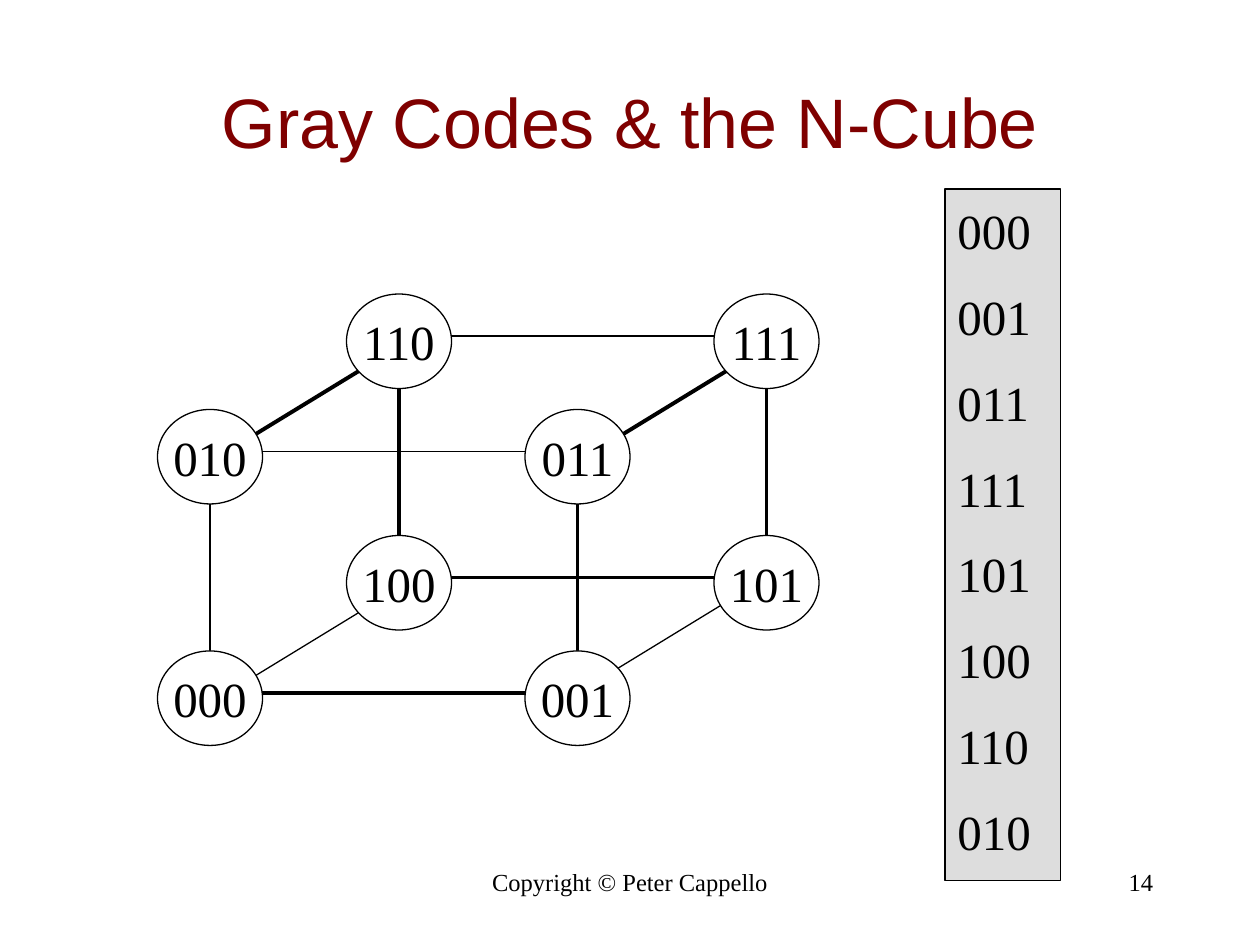
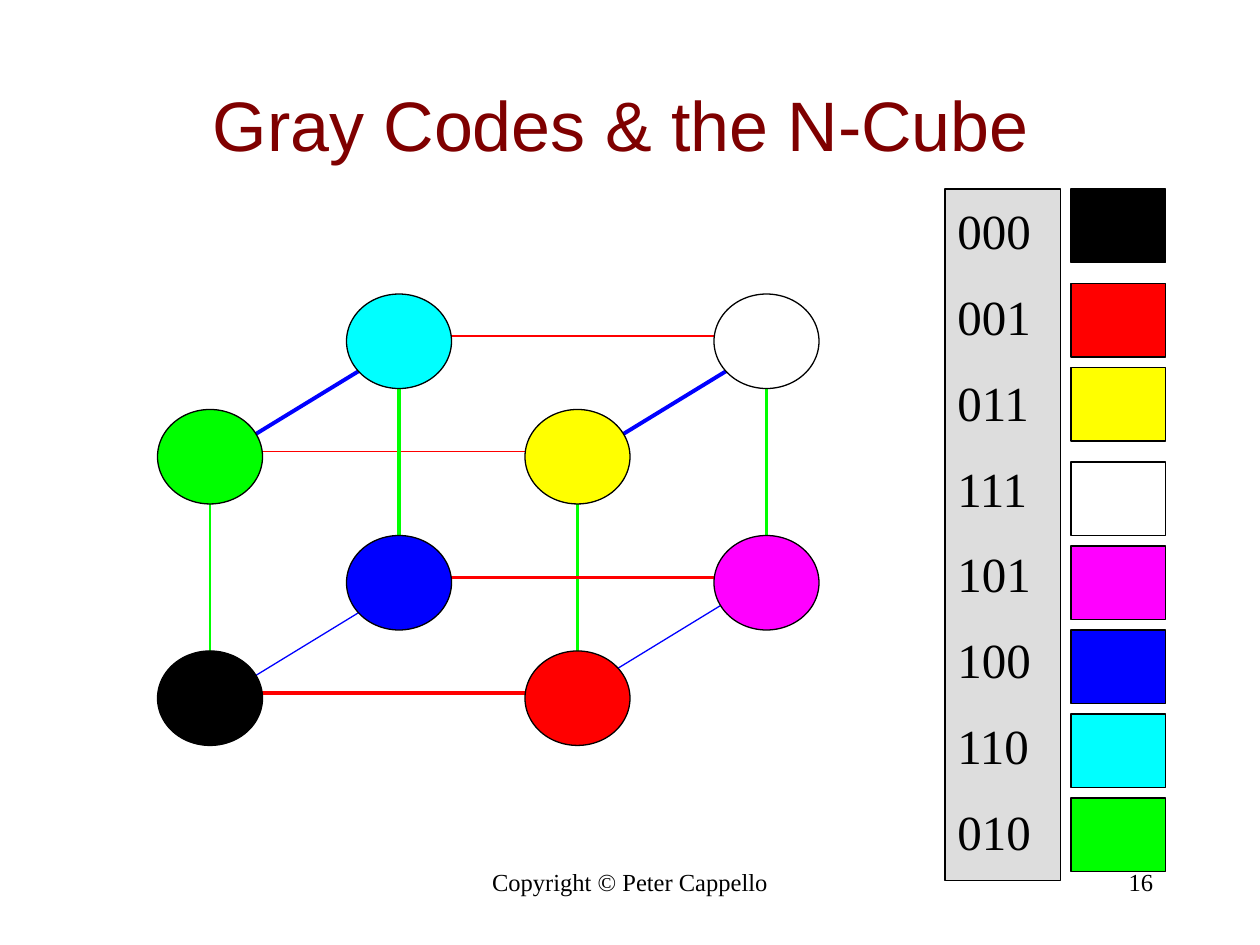
import itertools

import pptx
import pptx.dml.color
import pptx.enum.shapes
import pptx.enum.text
import pptx.util
from pptx.oxml.xmlchemy import OxmlElement

RGBColor = pptx.dml.color.RGBColor
SHAPE = pptx.enum.shapes.MSO_SHAPE
ALIGN = pptx.enum.text.PP_ALIGN
ANCHOR = pptx.enum.text.MSO_ANCHOR

PX = 9525  # EMU in one px, 96 px to the inch
BLACK = RGBColor(0x00, 0x00, 0x00)
WHITE = RGBColor(0xFF, 0xFF, 0xFF)
MAROON = RGBColor(0x7F, 0x00, 0x00)
LIGHT_GRAY = RGBColor(0xDD, 0xDD, 0xDD)
SERIF = "Times New Roman"
SANS = "Arial"
THIN, THICK = 0.75, 2.25

GRAY_CODES = ["000", "001", "011", "111", "101", "100", "110", "010"]
CODE_STEPS = {frozenset(pair) for pair in itertools.pairwise(GRAY_CODES)}

# Cube edges: start code, end code, start height below the node's top
EDGES = [
    ("011", "111", 40), ("001", "101", 32), ("010", "110", 40), ("000", "100", 40),
    ("001", "011", 16), ("000", "010", 32), ("000", "001", 32), ("010", "011", 32),
    ("101", "111", 16), ("100", "110", 32), ("100", "101", 32), ("110", "111", 32),
]
NODE_WIDTH, NODE_HEIGHT = 80, 72
SWATCH_TOPS = [144, 216, 280, 352, 416, 480, 544, 608]


def px(*lengths):
    return [pptx.util.Emu(length * PX) for length in lengths]


def code_color(code):
    """The three bits of a code switch blue, green and red."""
    blue, green, red = (255 * int(bit) for bit in code)
    return RGBColor(red, green, blue)


def node_position(code):
    """Left and top of the node for a code."""
    depth, height, across = (int(bit) for bit in code)
    return 120 + 280 * across + 144 * depth, 496 - 184 * height - 88 * depth


def write_text(shape, text, font=SERIF, size=28, color=BLACK, align=ALIGN.LEFT,
               anchor=ANCHOR.TOP, wrap=True, space_after=0):
    frame = shape.text_frame
    frame.word_wrap = wrap
    frame.vertical_anchor = anchor
    frame.text = text
    for paragraph in frame.paragraphs:
        paragraph.alignment = align
        paragraph.space_after = pptx.util.Pt(space_after)
        run_font = paragraph.runs[0].font
        run_font.name = font
        run_font.size = pptx.util.Pt(size)
        run_font.color.rgb = color


def add_text(slide, box, text, **text_format):
    write_text(slide.shapes.add_textbox(*px(*box)), text, **text_format)


def add_filled_shape(slide, kind, box, fill):
    shape = slide.shapes.add_shape(kind, *px(*box))
    shape.shadow.inherit = False
    shape.fill.solid()
    shape.fill.fore_color.rgb = fill
    shape.line.color.rgb = BLACK
    shape.line.width = pptx.util.Pt(THIN)
    return shape


def add_edge(slide, start, end, offset, colored):
    start_left, start_top = node_position(start)
    end_left, end_top = node_position(end)
    axis = f"{int(start, 2) ^ int(end, 2):03b}"
    end_offset = offset + (8 if axis == "010" else 0)
    center = NODE_WIDTH // 2
    line = slide.shapes.add_connector(
        pptx.enum.shapes.MSO_CONNECTOR.STRAIGHT,
        *px(start_left + center, start_top + offset,
            end_left + center, end_top + end_offset))
    line.line.color.rgb = code_color(axis) if colored else BLACK
    line.line.width = pptx.util.Pt(THICK if frozenset((start, end)) in CODE_STEPS else THIN)
    line._element.spPr.append(OxmlElement("a:effectLst"))


def add_node(slide, code, colored):
    box = (*node_position(code), NODE_WIDTH, NODE_HEIGHT)
    node = add_filled_shape(slide, SHAPE.OVAL, box, code_color(code) if colored else WHITE)
    if not colored:
        write_text(node, code, align=ALIGN.CENTER, anchor=ANCHOR.MIDDLE, wrap=False)


def add_code_list(slide):
    panel = add_filled_shape(slide, SHAPE.RECTANGLE, (720, 144, 88, 527), LIGHT_GRAY)
    write_text(panel, "\n".join(GRAY_CODES), space_after=15.4)
    panel.text_frame.margin_top = px(9)[0]


def add_cube_slide(presentation, number, title_corner, colored):
    slide = presentation.slides.add_slide(presentation.slide_layouts[6])

    # Footer and title
    add_text(slide, (328, 656, 304, 48), "Copyright © Peter Cappello",
             size=14, align=ALIGN.CENTER)
    add_text(slide, (688, 656, 200, 48), str(number), size=14, align=ALIGN.RIGHT)
    add_text(slide, (*title_corner, 816, 120), "Gray Codes & the N-Cube", font=SANS,
             size=40, color=MAROON, align=ALIGN.CENTER, anchor=ANCHOR.MIDDLE)

    # Cube
    for start, end, offset in EDGES:
        add_edge(slide, start, end, offset, colored)
    for code in GRAY_CODES:
        add_node(slide, code, colored)

    # Code list, with its colour key
    add_code_list(slide)
    if colored:
        for code, top in zip(GRAY_CODES, SWATCH_TOPS):
            add_filled_shape(slide, SHAPE.RECTANGLE, (816, top, 72, 56), code_color(code))


def main():
    presentation = pptx.Presentation()
    presentation.slide_width, presentation.slide_height = px(960, 720)
    add_cube_slide(presentation, 14, (72, 32), colored=False)
    add_cube_slide(presentation, 16, (65, 34), colored=True)
    presentation.save("out.pptx")


if __name__ == "__main__":
    main()
